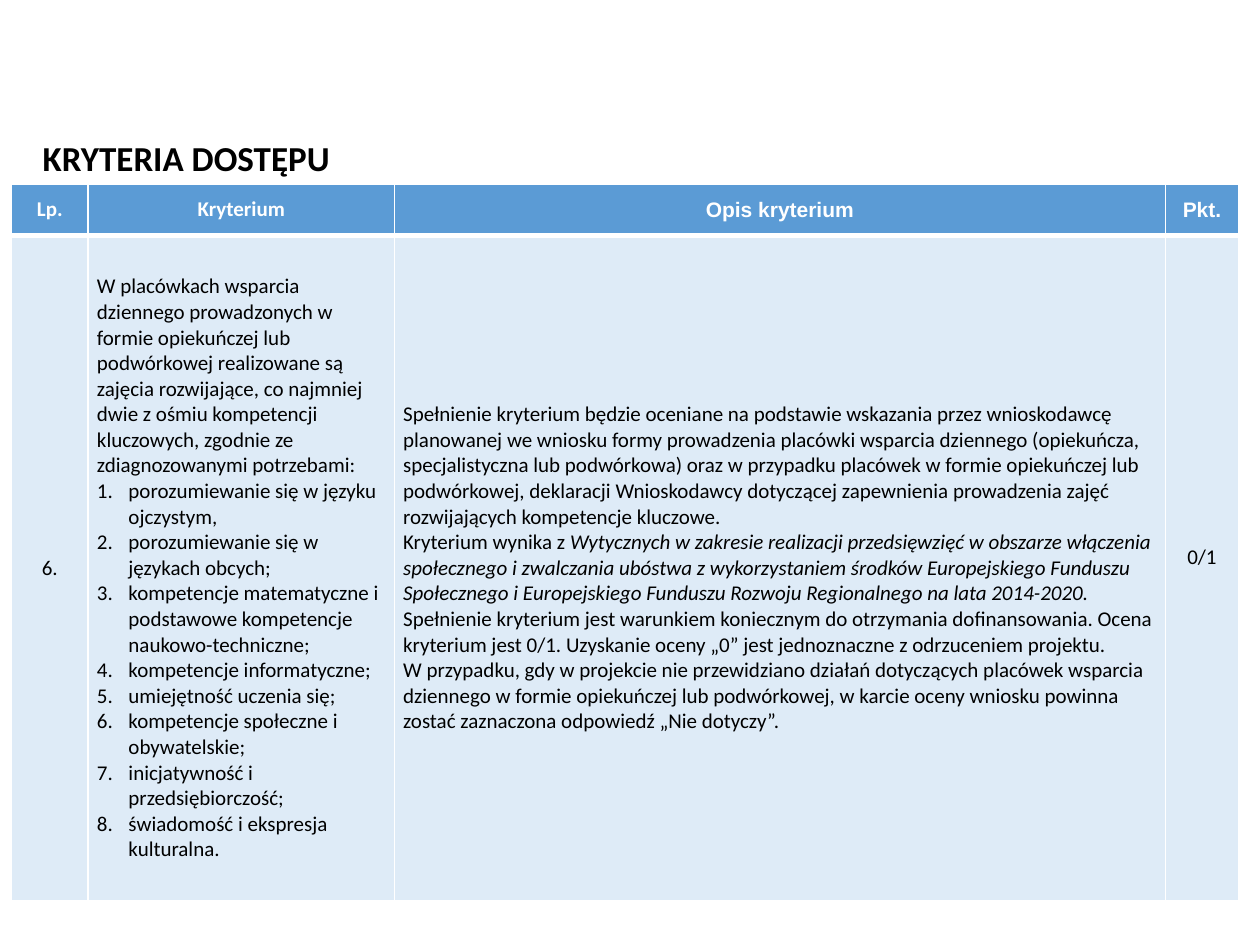
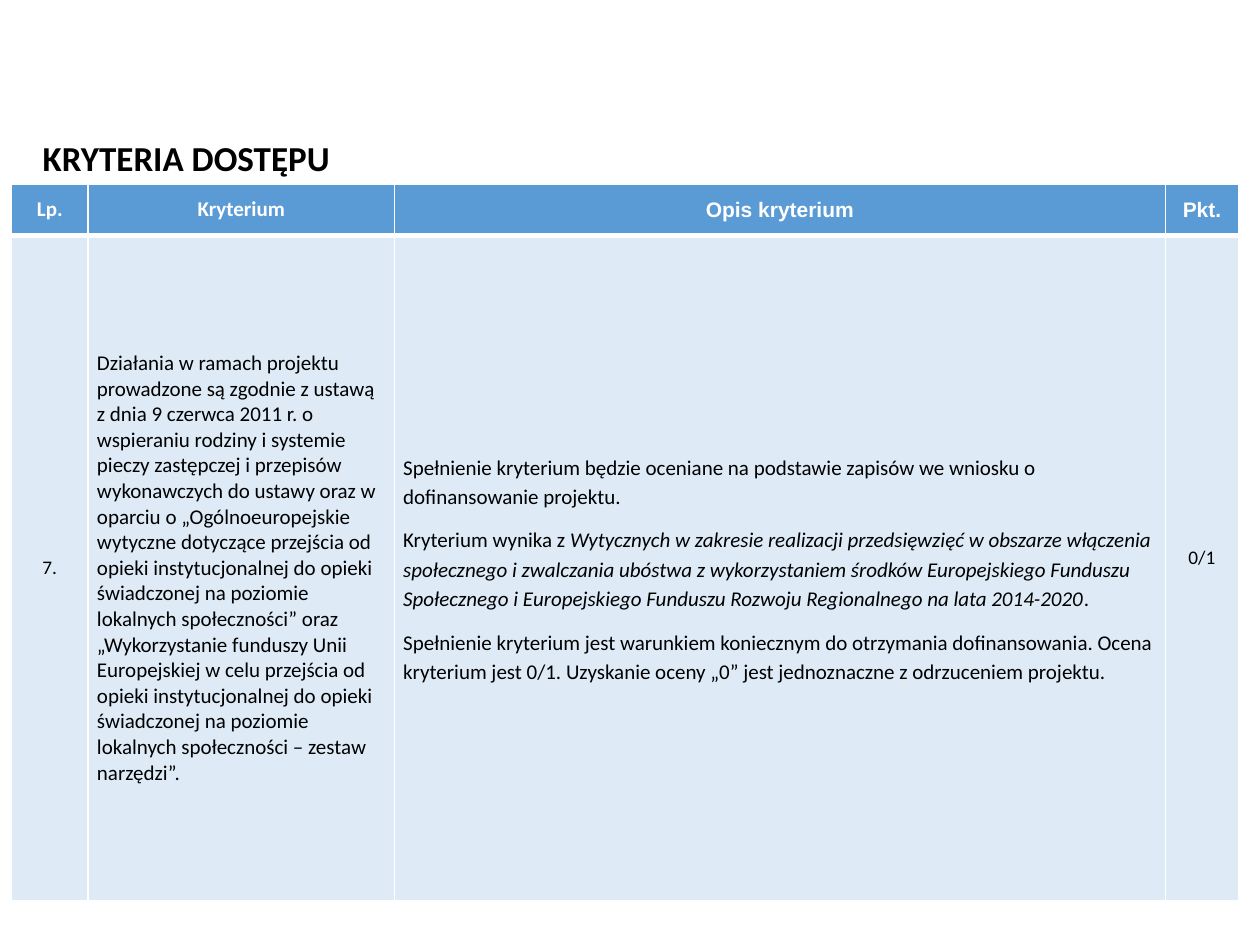
from lxml.etree import SubElement
from pptx import Presentation
from pptx.dml.color import RGBColor
from pptx.enum.text import MSO_ANCHOR, MSO_AUTO_SIZE, PP_ALIGN
from pptx.oxml.ns import qn
from pptx.util import Inches, Pt

TITLE = "KRYTERIA DOSTĘPU"
HEADERS = [("Lp.", "Calibri"), ("Kryterium", "Calibri"),
           ("Opis kryterium", "Arial"), ("Pkt.", "Arial")]
GUIDELINES = ("Wytycznych w zakresie realizacji przedsięwzięć w obszarze włączenia społecznego "
              "i zwalczania ubóstwa z wykorzystaniem środków Europejskiego Funduszu Społecznego "
              "i Europejskiego Funduszu Rozwoju Regionalnego na lata 2014-2020")
SOURCE = "Kryterium wynika z "
CONDITION = ("Spełnienie kryterium jest warunkiem koniecznym do otrzymania dofinansowania. "
             "Ocena kryterium jest 0/1. Uzyskanie oceny „0” jest jednoznaczne z odrzuceniem projektu.")
POINTS = "0/1"

# Paragraph parts alternate between upright and italic.
CRITERIA = [
    {
        "number": "6.",
        "criterion": "W placówkach wsparcia dziennego prowadzonych w formie opiekuńczej lub podwórkowej "
                     "realizowane są zajęcia rozwijające, co najmniej dwie z ośmiu kompetencji kluczowych, "
                     "zgodnie ze zdiagnozowanymi potrzebami:",
        "competences": [
            "porozumiewanie się w języku ojczystym,",
            "porozumiewanie się w językach obcych;",
            "kompetencje matematyczne i podstawowe kompetencje naukowo-techniczne;",
            "kompetencje informatyczne;",
            "umiejętność uczenia się;",
            "kompetencje społeczne i obywatelskie;",
            "inicjatywność i przedsiębiorczość;",
            "świadomość i ekspresja kulturalna.",
        ],
        "description": [
            ("Spełnienie kryterium będzie oceniane na podstawie wskazania przez wnioskodawcę planowanej "
             "we wniosku formy prowadzenia placówki wsparcia dziennego (opiekuńcza, specjalistyczna lub "
             "podwórkowa) oraz w przypadku placówek w formie opiekuńczej lub podwórkowej, deklaracji "
             "Wnioskodawcy dotyczącej zapewnienia prowadzenia zajęć rozwijających kompetencje kluczowe.",),
            (SOURCE, GUIDELINES + "."),
            (CONDITION,),
            ("W przypadku, gdy w projekcie nie przewidziano działań dotyczących placówek wsparcia dziennego "
             "w formie opiekuńczej lub podwórkowej, w karcie oceny wniosku powinna zostać zaznaczona "
             "odpowiedź „Nie dotyczy”.",),
        ],
        "side_size": 12, "line_spacing": 1.0, "gap": 0,
    },
    {
        "number": "7.",
        "criterion": "Działania w ramach projektu prowadzone są zgodnie z ustawą z dnia 9 czerwca 2011 r. "
                     "o wspieraniu rodziny i systemie pieczy zastępczej i przepisów wykonawczych do ustawy "
                     "oraz w oparciu o „Ogólnoeuropejskie wytyczne dotyczące przejścia od opieki "
                     "instytucjonalnej do opieki świadczonej na poziomie lokalnych społeczności” oraz "
                     "„Wykorzystanie funduszy Unii Europejskiej w celu przejścia od opieki instytucjonalnej "
                     "do opieki świadczonej na poziomie lokalnych społeczności – zestaw narzędzi”.",
        "competences": [],
        "description": [
            ("Spełnienie kryterium będzie oceniane na podstawie zapisów we wniosku o dofinansowanie projektu.",),
            (SOURCE, GUIDELINES, "."),
            (CONDITION,),
        ],
        "side_size": 11, "line_spacing": 1.15, "gap": 8,
    },
]

BLACK, WHITE, HEADER_BLUE, BODY_BLUE = "000000", "FFFFFF", "5B9BD5", "DEEBF7"
COLUMN_WIDTHS = [0.61, 2.43, 6.12, 0.58]
ROW_HEIGHTS = [0.41, 5.28]
TABLE_LEFT, TABLE_TOP = 0.09, 1.46


def color(hex_value):
    return RGBColor.from_string(hex_value)


def style(font, size, hex_value, name="Calibri", bold=False):
    font.size, font.name, font.bold = Pt(size), name, bold
    font.color.rgb = color(hex_value)


def number_paragraph(paragraph):
    properties = paragraph._p.get_or_add_pPr()
    properties.set("marL", str(Inches(0.25)))
    properties.set("indent", str(-Inches(0.25)))
    SubElement(properties, qn("a:buFont"), typeface="+mj-lt")
    SubElement(properties, qn("a:buAutoNum"), type="arabicPeriod")


def style_cell(cell, fill, top, bottom):
    properties = cell._tc.get_or_add_tcPr()
    for side, width in (("L", 1), ("R", 1), ("T", top), ("B", bottom)):
        border = SubElement(properties, qn(f"a:ln{side}"), w=str(Pt(width)))
        SubElement(SubElement(border, qn("a:solidFill")), qn("a:srgbClr"), val=WHITE)
    cell.fill.solid()
    cell.fill.fore_color.rgb = color(fill)
    cell.vertical_anchor = MSO_ANCHOR.MIDDLE


def write_centred(cell, text, size, hex_value, **font):
    cell.text_frame.text = text
    paragraph = cell.text_frame.paragraphs[0]
    paragraph.alignment = PP_ALIGN.CENTER
    style(paragraph.runs[0].font, size, hex_value, **font)


def write_paragraphs(cell, paragraphs, numbered_from=None, line_spacing=1.0, gap=0):
    frame = cell.text_frame
    for index, parts in enumerate(paragraphs):
        paragraph = frame.add_paragraph() if index else frame.paragraphs[0]
        paragraph.line_spacing = line_spacing
        if index and gap:
            paragraph.space_before = Pt(gap)
        if numbered_from is not None and index >= numbered_from:
            number_paragraph(paragraph)
        for position, part in enumerate(parts):
            run = paragraph.add_run()
            run.text = part
            style(run.font, 12, BLACK)
            run.font.italic = position % 2 == 1


def add_title(slide):
    title = slide.shapes.add_textbox(Inches(0.24), Inches(1.03), Inches(3.69), Inches(0.44))
    frame = title.text_frame
    frame.word_wrap = True
    frame.auto_size = MSO_AUTO_SIZE.SHAPE_TO_FIT_TEXT
    frame.vertical_anchor = MSO_ANCHOR.MIDDLE
    frame.text = TITLE
    style(frame.paragraphs[0].runs[0].font, 20, BLACK, bold=True)


def add_criteria_table(slide, entry):
    table = slide.shapes.add_table(
        len(ROW_HEIGHTS), len(COLUMN_WIDTHS), Inches(TABLE_LEFT), Inches(TABLE_TOP),
        Inches(sum(COLUMN_WIDTHS)), Inches(sum(ROW_HEIGHTS))).table
    for column, width in zip(table.columns, COLUMN_WIDTHS):
        column.width = Inches(width)
    for row, height in zip(table.rows, ROW_HEIGHTS):
        row.height = Inches(height)

    for cell, (header, font_name) in zip(table.rows[0].cells, HEADERS):
        style_cell(cell, HEADER_BLUE, top=1, bottom=3)
        write_centred(cell, header, 12, WHITE, name=font_name, bold=True)

    number, criterion, description, points = table.rows[1].cells
    for cell in (number, criterion, description, points):
        style_cell(cell, BODY_BLUE, top=3, bottom=1)
    for cell in (criterion, description, points):
        cell.margin_left = cell.margin_right = Inches(0.07)
        cell.margin_top = cell.margin_bottom = 0
    points.margin_bottom = Inches(0.17)

    write_centred(number, entry["number"], entry["side_size"], BLACK)
    write_centred(points, POINTS, entry["side_size"], BLACK)
    write_paragraphs(criterion, [(text,) for text in [entry["criterion"], *entry["competences"]]],
                     numbered_from=1)
    write_paragraphs(description, entry["description"],
                     line_spacing=entry["line_spacing"], gap=entry["gap"])


def main():
    presentation = Presentation()
    presentation.slide_width, presentation.slide_height = Inches(10), Inches(7.5)
    for entry in CRITERIA:
        slide = presentation.slides.add_slide(presentation.slide_layouts[6])
        add_criteria_table(slide, entry)
        add_title(slide)
    presentation.save("out.pptx")


if __name__ == "__main__":
    main()
